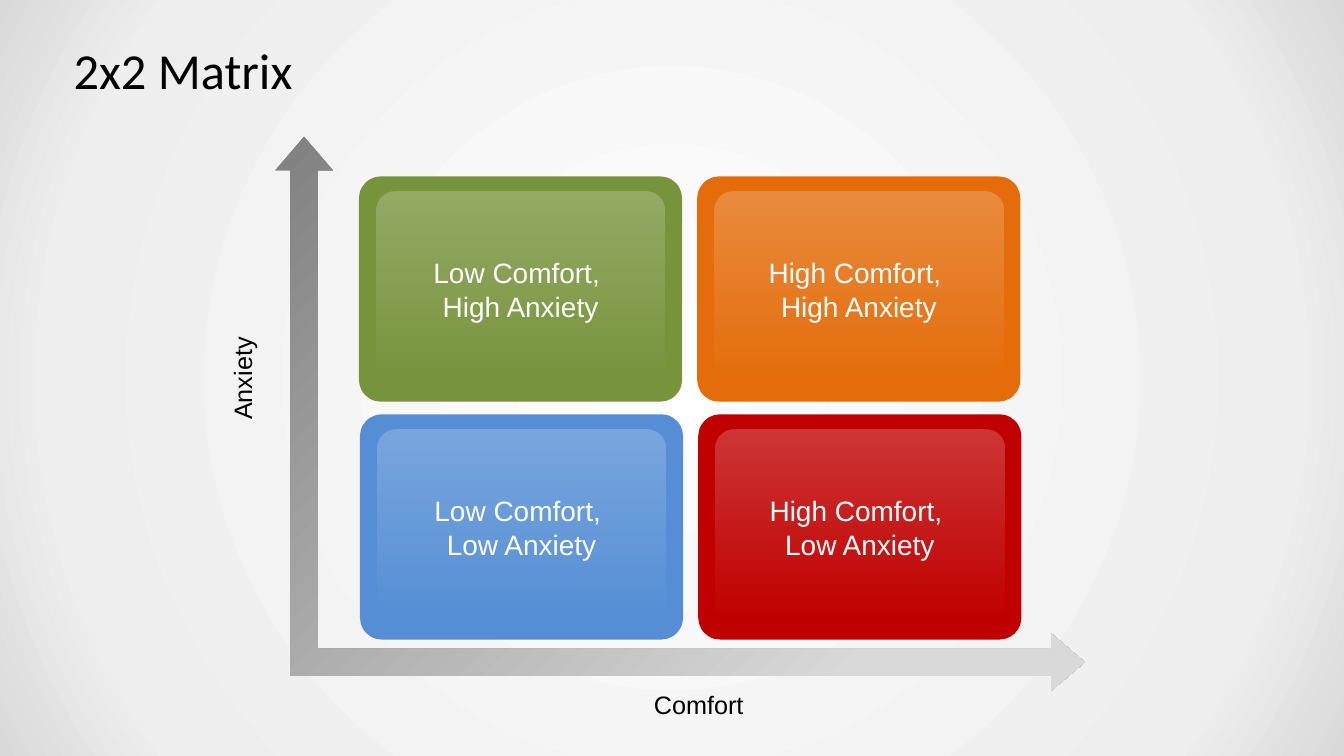
from lxml import etree
from pptx import Presentation
from pptx.dml.color import RGBColor
from pptx.enum.shapes import MSO_SHAPE
from pptx.enum.text import MSO_ANCHOR, MSO_AUTO_SIZE, PP_ALIGN
from pptx.oxml import parse_xml
from pptx.oxml.ns import qn
from pptx.util import Inches, Pt

ROUND, ARROW = MSO_SHAPE.ROUNDED_RECTANGLE, MSO_SHAPE.LEFT_UP_ARROW
MIDDLE, CENTER, LEFT = MSO_ANCHOR.MIDDLE, PP_ALIGN.CENTER, PP_ALIGN.LEFT
NS = "http://schemas.openxmlformats.org/drawingml/2006/main"
COLORS = {
    "black": "000000", "white": "FFFFFF", "pale": "EEEEEE",
    "light": "D9D9D9", "gray": "808080", "green": "77933C",
    "orange": "E46C0A", "blue": "558ED5", "red": "C00000",
}


def grade(owner, stops, shade):
    """Fill owner with a gradient of (percent, colour, opacity) stops."""
    owner.fill.solid()
    root = owner.element if hasattr(owner, "element") else slide.element
    solid = root.find(".//" + qn("a:solidFill"))
    marks = "".join(
        f'<a:gs pos="{pos * 1000}"><a:srgbClr val="{COLORS[name]}">'
        f'<a:alpha val="{alpha * 1000}"/></a:srgbClr></a:gs>'
        for pos, name, alpha in stops)
    solid.getparent().replace(solid, parse_xml(
        f'<a:gradFill xmlns:a="{NS}" rotWithShape="1">'
        f'<a:gsLst>{marks}</a:gsLst>{shade}</a:gradFill>'))


def write(frame, text, size, color, align, font="Arial"):
    frame.text = text
    for para in frame.paragraphs:
        para.alignment = align
        for run in para.runs:
            run.font.name = font
            run.font.size = Pt(size)
            run.font.color.rgb = RGBColor.from_string(COLORS[color])


prs = Presentation()
prs.slide_width, prs.slide_height = Inches(26.66), Inches(15)
slide = prs.slides.add_slide(prs.slide_layouts[5])
grade(slide.background,
      [(0, "white", 100), (81, "pale", 100), (100, "light", 100)],
      '<a:path path="circle"><a:fillToRect l="50000" t="50000" '
      'r="50000" b="50000"/></a:path>')

# Title
title = slide.shapes.title
title.left, title.top = Inches(1.33), Inches(0.6)
title.width, title.height = Inches(23.99), Inches(1.56)
frame = title.text_frame
frame.auto_size = MSO_AUTO_SIZE.NONE
frame.vertical_anchor = MIDDLE
frame.margin_left = frame.margin_right = Inches(0.13)
frame.margin_top = frame.margin_bottom = Inches(0.07)
write(frame, "2x2 Matrix", 72, "black", LEFT, "Calibri")

# Axes: one arrow with two heads, mirrored to point up and right
axes = slide.shapes.add_shape(
    ARROW, Inches(5.46), Inches(2.71), Inches(16.06), Inches(11))
axes.element.spPr.find(qn("a:xfrm")).set("flipH", "1")
for i, value in enumerate((0.049, 0.052, 0.061)):
    axes.adjustments[i] = value
axes.shadow.inherit = False
axes.line.fill.background()
grade(axes, [(18, "light", 100), (100, "gray", 100)],
      '<a:path path="circle"><a:fillToRect l="100000" t="100000"/></a:path>')

# Axis labels
labels = [
    ("Anxiety", 4.45, 6.67, 0.81, 1.76, LEFT, "vert270"),
    ("Comfort", 12.86, 13.62, 2, 0.71, CENTER, "horz"),
]
for text, x, y, w, h, align, turn in labels:
    box = slide.shapes.add_textbox(Inches(x), Inches(y), Inches(w), Inches(h))
    frame = box.text_frame
    frame.word_wrap = False
    frame.auto_size = MSO_AUTO_SIZE.SHAPE_TO_FIT_TEXT
    box.element.txBody.find(qn("a:bodyPr")).set("vert", turn)
    write(frame, text, 36, "black", align)

# Quadrants: a coloured card with a glossy panel on top
cards = [["green", "orange"], ["blue", "red"]]
for row, names in enumerate(cards):
    for col, name in enumerate(names):
        x = 7.12 + 6.71 * col + 0.02 * row
        y = 3.5 + 4.72 * row
        group = slide.shapes.add_group_shape()
        card = group.shapes.add_shape(
            ROUND, Inches(x), Inches(y), Inches(6.41), Inches(4.47))
        panel = group.shapes.add_shape(
            ROUND, Inches(x + 0.34), Inches(y + 0.3), Inches(5.73), Inches(3.88))
        for shape in (card, panel):
            shape.adjustments[0] = 0.097
            shape.shadow.inherit = False
            shape.line.fill.background()
        card.fill.solid()
        card.fill.fore_color.rgb = RGBColor.from_string(COLORS[name])
        grade(panel, [(0, "white", 0), (100, "white", 22)],
              '<a:lin ang="16200000" scaled="0"/>')
        panel.text_frame.vertical_anchor = MIDDLE
        comfort, anxiety = ("Low", "High")[col], ("High", "Low")[row]
        write(panel.text_frame, f"{comfort} Comfort, \n{anxiety} Anxiety",
              40, "white", CENTER)

etree.cleanup_namespaces(slide.element)
prs.save("out.pptx")
